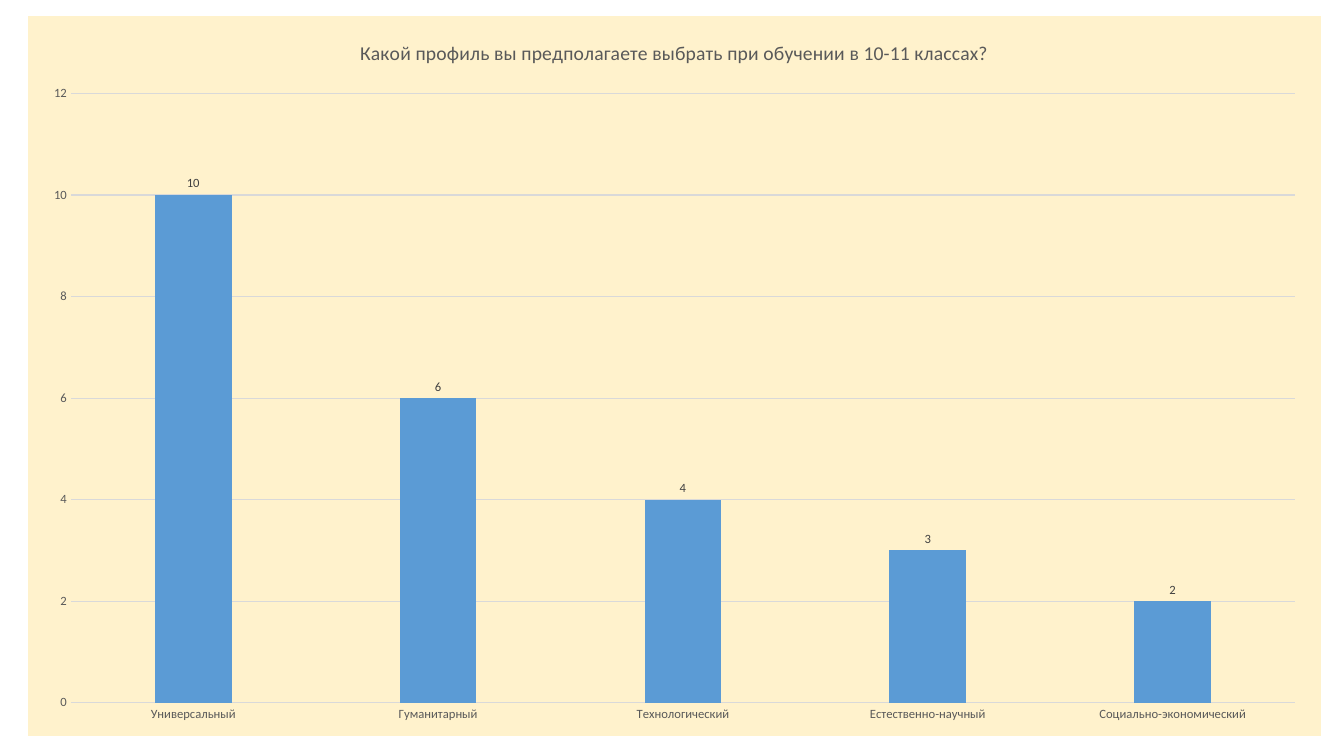
from dataclasses import dataclass

from lxml.etree import SubElement
from pptx import Presentation
from pptx.chart.data import CategoryChartData
from pptx.dml.color import RGBColor
from pptx.enum.chart import XL_CHART_TYPE as ChartType
from pptx.enum.chart import XL_LABEL_POSITION as LabelPos
from pptx.enum.chart import XL_TICK_MARK as TickMark
from pptx.oxml import parse_xml
from pptx.oxml.ns import nsdecls, qn
from pptx.util import Inches, Pt

TITLE = "Какой профиль вы предполагаете выбрать при обучении в 10-11 классах?"
VOTES = {
    "Универсальный": 10,
    "Гуманитарный": 6,
    "Технологический": 4,
    "Естественно-научный": 3,
    "Социально-экономический": 2,
}


@dataclass(frozen=True)
class Theme:
    font: str = "Calibri"
    panel: str = "FFF2CC"
    bar: str = "5B9BD5"
    rule: str = "D9D9D9"
    text: str = "595959"
    label: str = "404040"
    title_size: float = 14
    base_size: float = 10
    small_size: float = 9
    rule_width: float = 0.75


def set_attrs(obj, values):
    for name, value in values.items():
        setattr(obj, name, value)


class SlideBuilder:
    def __init__(self, prs, theme):
        self.prs, self.theme = prs, theme
        self.s = prs.slides.add_slide(prs.slide_layouts[6])

    def style_font(self, font, size, color):
        set_attrs(font, {"name": self.theme.font, "size": Pt(size), "bold": False})
        font.color.rgb = RGBColor.from_string(color)

    def style_rule(self, line):
        line.color.rgb = RGBColor.from_string(self.theme.rule)
        line.width = Pt(self.theme.rule_width)

    def fill_background(self, chart):
        """Fill the whole chart area, without an outline."""
        sp_pr = parse_xml(f"<c:spPr {nsdecls('c', 'a')}/>")
        fill = SubElement(sp_pr, qn("a:solidFill"))
        SubElement(fill, qn("a:srgbClr"), val=self.theme.panel)
        SubElement(SubElement(sp_pr, qn("a:ln")), qn("a:noFill"))
        chart.element.find(qn("c:chart")).addnext(sp_pr)

    def style_axes(self, chart):
        t = self.theme
        for axis in (chart.category_axis, chart.value_axis):
            set_attrs(axis, {"major_tick_mark": TickMark.NONE,
                             "minor_tick_mark": TickMark.NONE})
            self.style_font(axis.tick_labels.font, t.small_size, t.text)
        self.style_rule(chart.category_axis.format.line)
        values = chart.value_axis
        set_attrs(values, {"minimum_scale": 0, "maximum_scale": 12, "major_unit": 2,
                           "has_major_gridlines": True})
        values.format.line.fill.background()
        self.style_rule(values.major_gridlines.format.line)

    def style_bars(self, plot):
        t = self.theme
        set_attrs(plot, {"gap_width": 219, "overlap": -27,
                         "vary_by_categories": False, "has_data_labels": True})
        fill = plot.series[0].format.fill
        fill.solid()
        fill.fore_color.rgb = RGBColor.from_string(t.bar)
        set_attrs(plot.data_labels, {"show_value": True,
                                     "position": LabelPos.OUTSIDE_END})
        self.style_font(plot.data_labels.font, t.small_size, t.label)

    def column_chart(self, title, votes, left, top, width, height):
        """Add a column chart placed by shares of the slide's size."""
        t, w, h = self.theme, self.prs.slide_width, self.prs.slide_height
        data = CategoryChartData()
        data.categories = list(votes)
        data.add_series("Ответы", list(votes.values()))
        box = (int(left * w), int(top * h), int(width * w), int(height * h))
        chart = self.s.shapes.add_chart(ChartType.COLUMN_CLUSTERED, *box, data).chart
        chart.has_legend = False
        self.style_font(chart.font, t.base_size, t.text)
        self.fill_background(chart)

        p = chart.chart_title.text_frame.paragraphs[0]
        r = p.add_run()
        r.text = title
        self.style_font(r.font, t.title_size, t.text)
        chart.chart_title.include_in_layout = False

        self.style_axes(chart)
        self.style_bars(chart.plots[0])


def main():
    prs = Presentation()
    set_attrs(prs, {"slide_width": Inches(13.33), "slide_height": Inches(7.5)})
    slide = SlideBuilder(prs, Theme())
    slide.column_chart(TITLE, VOTES, 0.28 / 13.33, 0.16 / 7.5, 12.82 / 13.33, 7.14 / 7.5)
    prs.save("out.pptx")


if __name__ == "__main__":
    main()
